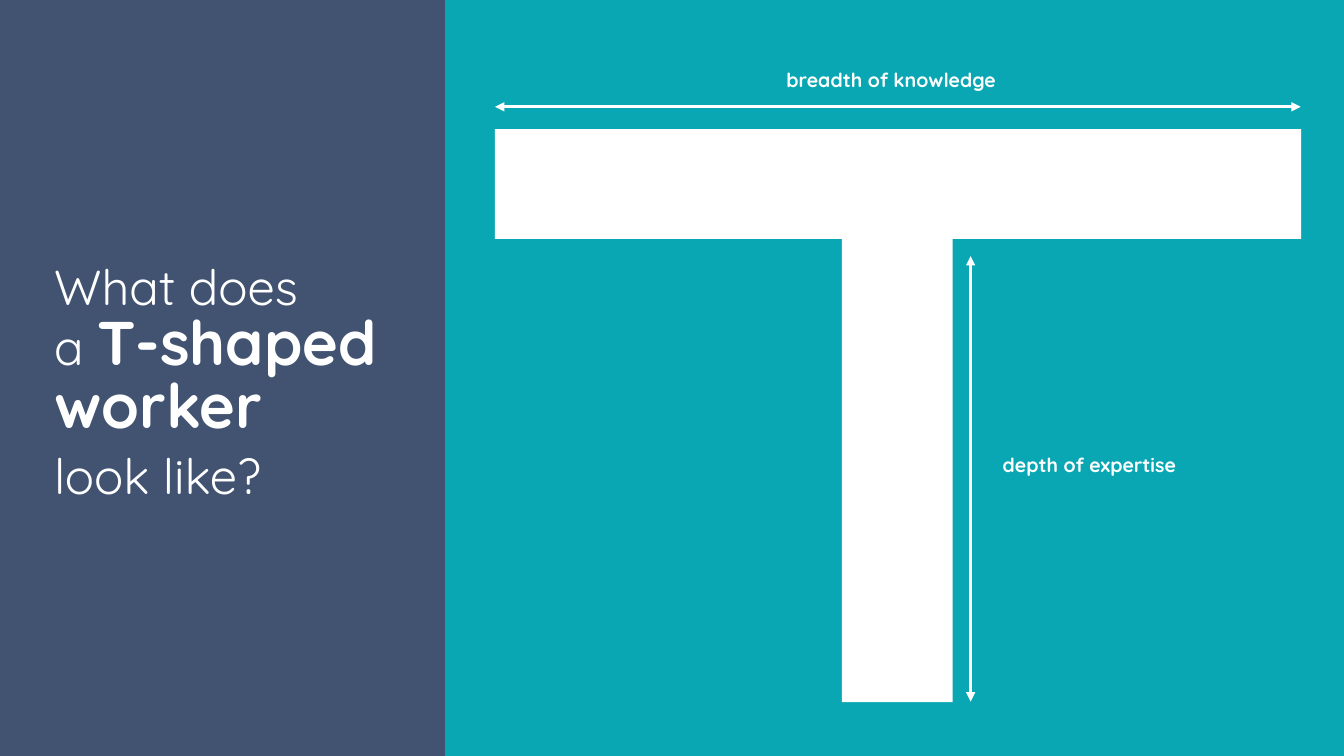
from dataclasses import dataclass

from lxml import etree
from pptx import Presentation
from pptx import util as u
from pptx.dml.color import RGBColor
from pptx.enum import shapes, text
from pptx.oxml.ns import qn

WIDE, HIGH = u.Inches(13.33), u.Inches(7.5)
FONT = "Quicksand"
NAVY, TEAL, WHITE = "425371", "08A7B3", "FFFFFF"


@dataclass
class Box:
    """Left, top, width and height in percent of the slide."""
    left: float
    top: float
    width: float
    height: float

    def place(self) -> tuple[int, int, int, int]:
        return (across(self.left), down(self.top),
                across(self.width), down(self.height))


@dataclass
class Block:
    box: Box
    fill: str


@dataclass
class Label:
    box: Box
    words: str


@dataclass
class Arrow:
    """Start and end points in percent of the slide."""
    start: tuple[float, float]
    end: tuple[float, float]


@dataclass
class Part:
    words: str
    size: int
    bold: bool


def across(share: float) -> int:
    return round(WIDE * share / 100)


def down(share: float) -> int:
    return round(HIGH * share / 100)


def color(code: str) -> RGBColor:
    return RGBColor.from_string(code)


def style(run, size: int, bold: bool) -> None:
    run.font.name = FONT
    run.font.size = u.Pt(size)
    run.font.bold = bold
    run.font.color.rgb = color(WHITE)


def draw_block(slide, block: Block) -> None:
    shape = slide.shapes.add_shape(shapes.MSO_SHAPE.RECTANGLE, *block.box.place())
    shape.shadow.inherit = False
    shape.fill.solid()
    shape.fill.fore_color.rgb = color(block.fill)
    shape.line.fill.background()


def draw_arrow(slide, arrow: Arrow) -> None:
    (x1, y1), (x2, y2) = arrow.start, arrow.end
    line = slide.shapes.add_connector(
        shapes.MSO_CONNECTOR.STRAIGHT, across(x1), down(y1), across(x2), down(y2))
    line.line.color.rgb = color(WHITE)
    line.line.width = u.Pt(2.25)
    for end in ("a:headEnd", "a:tailEnd"):
        etree.SubElement(line.line._get_or_add_ln(), qn(end), type="triangle")
    etree.SubElement(line._element.spPr, qn("a:effectLst"))


def draw_label(slide, label: Label) -> None:
    frame = slide.shapes.add_textbox(*label.box.place()).text_frame
    frame.word_wrap = True
    frame.auto_size = text.MSO_AUTO_SIZE.SHAPE_TO_FIT_TEXT
    frame.text = label.words
    para = frame.paragraphs[0]
    para.alignment = text.PP_ALIGN.CENTER
    style(para.runs[0], 14, True)


def draw_title(slide, box: Box, lines: list[list[Part]]) -> None:
    frame = slide.shapes.add_textbox(*box.place()).text_frame
    frame.word_wrap = True
    frame.vertical_anchor = text.MSO_ANCHOR.MIDDLE
    for row, parts in enumerate(lines):
        para = frame.add_paragraph() if row else frame.paragraphs[0]
        para.line_spacing = u.Pt(45)
        hang = u.Inches(0.38)
        props = para._p.get_or_add_pPr()
        props.set("marL", str(hang))
        props.set("indent", str(-hang))
        for part in parts:
            run = para.add_run()
            run.text = part.words
            style(run, part.size, part.bold)


PANELS = [Block(Box(0, 0, 100, 100), NAVY),
          Block(Box(33.12, 0, 66.88, 100), TEAL)]
ARROWS = [Arrow((36.83, 14.13), (96.78, 14.13)),
          Arrow((72.22, 92.8), (72.22, 33.87))]
LABELS = [Label(Box(39.08, 8.27, 54.46, 4.53), "breadth of knowledge"),
          Label(Box(73.22, 59.2, 15.68, 4.53), "depth of expertise")]
LETTER = [Block(Box(36.83, 17.07, 59.98, 14.53), WHITE),
          Block(Box(62.64, 17.07, 8.25, 75.8), WHITE)]
TITLE = [[Part("What does", 35, False)],
         [Part("a ", 35, False), Part("T-shaped", 44, True)],
         [Part("worker", 44, True)],
         [Part("look like?", 35, False)]]


def main() -> None:
    deck = Presentation()
    deck.slide_width, deck.slide_height = WIDE, HIGH
    slide = deck.slides.add_slide(deck.slide_layouts[6])
    for panel in PANELS:
        draw_block(slide, panel)
    for arrow, label in zip(ARROWS, LABELS):
        draw_arrow(slide, arrow)
        draw_label(slide, label)
    draw_title(slide, Box(3.3, 27.07, 29.86, 45.87), TITLE)
    for bar in LETTER:
        draw_block(slide, bar)
    deck.save("out.pptx")


if __name__ == "__main__":
    main()
